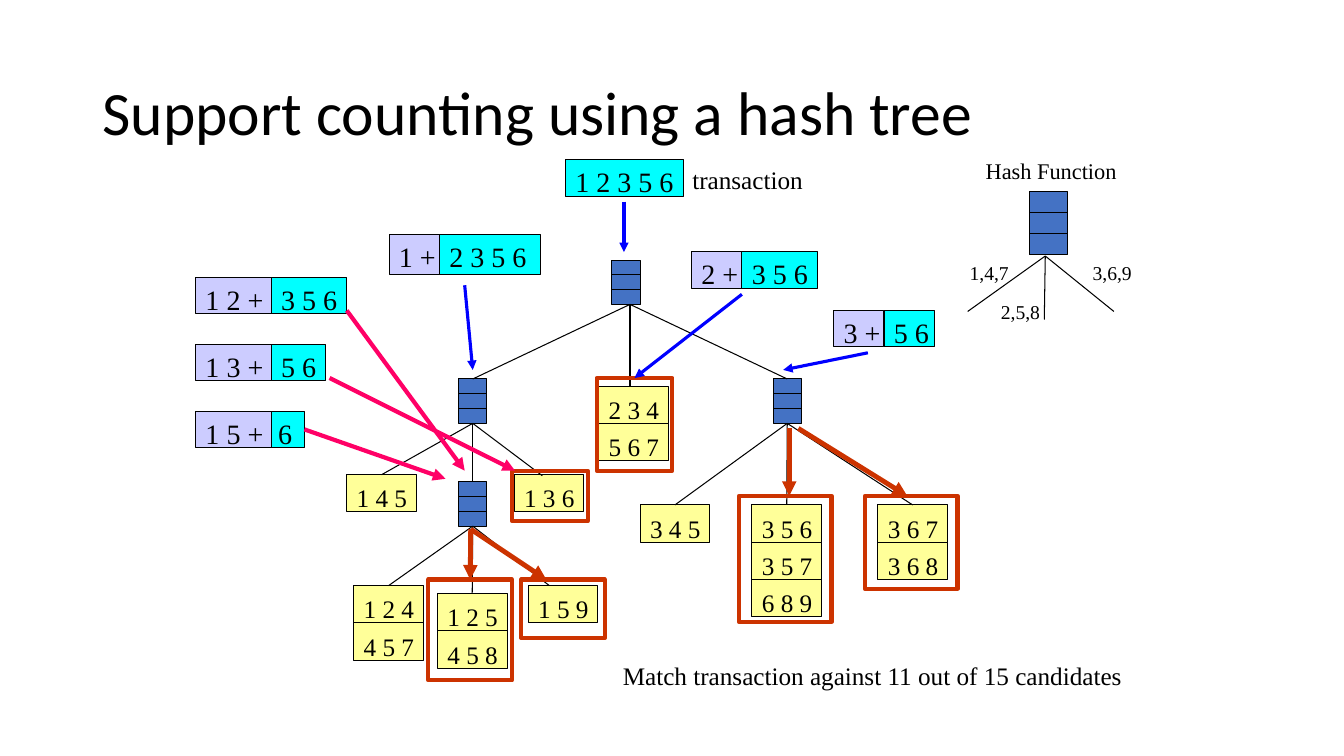
import pptx
import pptx.util
import pptx.dml.color
import pptx.enum.shapes
import pptx.enum.text
import lxml.etree

CELL = 0.1
COLS, ROWS = 133.33, 75
SNAP = 0.26
SERIF, SANS = "Times New Roman", "Calibri"
BLACK, NAVY, YELLOW = "000000", "4472C4", "FFFF99"
CYAN, LILAC = "00FFFF", "CCCCFF"
BLUE, PINK, RED = "0000FF", "FF0066", "CC3300"
LEAF = (6.9, 3.7)
NODE = (2.8, 4.4)

TITLE = ("Support counting using a hash tree", (9.2, 4, 115, 14.5))
LABELS = [
    ("transaction", 18, (67.7, 15.8, 13, 4)),
    ("Hash Function", 16, (96.8, 15.1, 15.1, 3.7)),
    ("1,4,7", 14, (95.2, 25.4, 5.9, 3.4)),
    ("2,5,8", 14, (98.3, 29.3, 5.9, 3.4)),
    ("3,6,9", 14, (107.4, 25.4, 5.9, 3.4)),
    ("Match transaction against 11 out of 15 candidates", 18,
     (60.8, 65, 52.6, 4)),
]
NODES = [
    (60.7, 25.8, *NODE), (45.5, 37.6, *NODE), (76.7, 37.6, *NODE),
    (45.5, 47.8, *NODE), (102.1, 19, 3.8, 6.3),
]
LEAVES = [
    (34.4, 47.1, ["1 4 5"]),
    (51, 47.1, ["1 3 6"]),
    (59.4, 38.3, ["2 3 4", "5 6 7"]),
    (63.5, 50.1, ["3 4 5"]),
    (74.6, 50.1, ["3 5 6", "3 5 7", "6 8 9"]),
    (87.1, 50.1, ["3 6 7", "3 6 8"]),
    (35.1, 58.1, ["1 2 4", "4 5 7"]),
    (43.4, 58.9, ["1 2 5", "4 5 8"]),
    (52.4, 58.1, ["1 5 9"]),
]
SPLITS = [
    ("1 +", "2 3 5 6", 38.6, 23.3, 5, 10, 3.9),
    ("2 +", "3 5 6", 68.6, 25, 5, 7.5, 3.6),
    ("3 +", "5 6", 82.7, 30.8, 5, 5, 3.6),
    ("1 2 +", "3 5 6", 19.4, 27.5, 7.5, 7.5, 3.6),
    ("1 3 +", "5 6", 19.4, 34.2, 7.5, 5.4, 3.6),
    ("1 5 +", "6", 19.4, 40.8, 7.5, 3.3, 3.6),
]
WHOLE = ("1 2 3 5 6", (56.1, 15.8, 11.7, 3.7))
EDGES = [
    ((62.5, 30.2), [(46.9, 37.6), (62.5, 38.3), (78.1, 37.6)]),
    ((46.7, 42), [(37.9, 47.2), (46.7, 47.8), (53.8, 47.2)]),
    ((78.1, 42), [(67, 50.1), (78.1, 50.1), (90.8, 50)]),
    ((46.9, 52.3), [(38.6, 58.1), (46.9, 58.9), (54.5, 58.1)]),
    ((103.7, 25.4), [(96, 30.9), (103.6, 31.7), (110.5, 30.9)]),
]
FRAMES = [
    (42.5, 57.5, 8.3, 10), (51.7, 57.5, 8.3, 5.8), (59.2, 37.5, 7.5, 9.2),
    (50.8, 46.7, 7.5, 5), (73.3, 49.2, 9.2, 12.5), (85.8, 49.2, 9.2, 9.2),
]
ARROWS = [
    (BLUE, 2.25, [((61.9, 20), (61.9, 25)), ((46.1, 28.3), (46.9, 36.7)),
                  ((73.6, 29.2), (62.7, 37.5)), ((86.1, 35), (77.7, 36.7))]),
    (PINK, 3, [((34.4, 30.8), (46.1, 46.7)), ((30, 42.5), (44.2, 47.5)),
               ((32.7, 37.5), (51.1, 46.7))]),
    (RED, 3.5, [((46.7, 52.5), (46.7, 57.5)), ((46.7, 52.5), (54.2, 57.5)),
                ((78.3, 42.5), (78.3, 49.2)), ((79.2, 42.5), (90, 49.2))]),
]

deck = pptx.Presentation()
deck.slide_width = pptx.util.Inches(COLS * CELL)
deck.slide_height = pptx.util.Inches(ROWS * CELL)
slide = deck.slides.add_slide(deck.slide_layouts[6])
rects = []


def span(*cells):
    return [pptx.util.Inches(cell * CELL) for cell in cells]


def tint(code):
    return pptx.dml.color.RGBColor.from_string(code)


def write(shape, words, size, face=SERIF, left=1, top=0.5, mid=False):
    anchor = pptx.enum.text.MSO_ANCHOR
    frame = shape.text_frame
    margins = span(left, top)
    look = {"word_wrap": True, "margin_left": margins[0],
            "margin_top": margins[1], "margin_right": 0, "margin_bottom": 0,
            "vertical_anchor": anchor.MIDDLE if mid else anchor.TOP}
    for key, value in look.items():
        setattr(frame, key, value)
    para = frame.paragraphs[0]
    para.alignment = pptx.enum.text.PP_ALIGN.LEFT
    run = para.add_run()
    run.text = words
    for key, value in {"size": pptx.util.Pt(size), "name": face}.items():
        setattr(run.font, key, value)
    run.font.color.rgb = tint(BLACK)
    return para


def label(words, size, area, **style):
    return write(slide.shapes.add_textbox(*span(*area)), words, size, **style)


def box(area, fill=None, edge=BLACK, width=0.75):
    kind = pptx.enum.shapes.MSO_SHAPE.RECTANGLE
    shape = slide.shapes.add_shape(kind, *span(*area))
    shape.shadow.inherit = False
    if fill:
        shape.fill.solid()
        shape.fill.fore_color.rgb = tint(fill)
    else:
        shape.fill.background()
    shape.line.color.rgb = tint(edge)
    shape.line.width = pptx.util.Pt(width)
    rects.append((shape, area))
    return shape


def join(attach, point):
    for shape, (x, y, w, h) in rects:
        sides = [(x + w / 2, y), (x, y + h / 2),
                 (x + w / 2, y + h), (x + w, y + h / 2)]
        for site, (sx, sy) in enumerate(sides):
            if max(abs(sx - point[0]), abs(sy - point[1])) < SNAP:
                attach(shape, site)
                return


def link(start, end, color=BLACK, width=0.75, head=False):
    kind = pptx.enum.shapes.MSO_CONNECTOR.STRAIGHT
    line = slide.shapes.add_connector(kind, *span(*start, *end))
    line.line.color.rgb = tint(color)
    line.line.width = pptx.util.Pt(width)
    tag = pptx.oxml.ns.qn
    if head:
        lxml.etree.SubElement(line.line._get_or_add_ln(), tag("a:tailEnd"),
                              type="triangle")
    lxml.etree.SubElement(line._element.spPr, tag("a:effectLst"))
    join(line.begin_connect, start)
    join(line.end_connect, end)


label(TITLE[0], 44, TITLE[1], face=SANS, mid=True).line_spacing = 0.9

for x, y, w, h in NODES:
    box((x, y, w, h), NAVY)
    for third in (1, 2):
        level = y + h * third / 3
        link((x, level), (x + w, level))

for x, y, sets in LEAVES:
    for row, words in enumerate(sets):
        area = (x, y + row * LEAF[1], *LEAF)
        write(box(area, YELLOW), words, 18, top=0.8)

for start, ends in EDGES:
    for end in ends:
        link(start, end)

write(box(WHOLE[1], CYAN), WHOLE[0], 20)
for first, rest, x, y, wide, tail, h in SPLITS:
    write(box((x + wide, y, tail, h), CYAN), rest, 20,
          left=0.7 if len(rest) == 1 else 1)
    write(box((x, y, wide, h), LILAC), first, 20)

for words, size, area in LABELS:
    label(words, size, area)

for area in FRAMES:
    box(area, edge=RED, width=3)

for color, width, pairs in ARROWS:
    for start, end in pairs:
        link(start, end, color, width, head=True)

deck.save("out.pptx")
